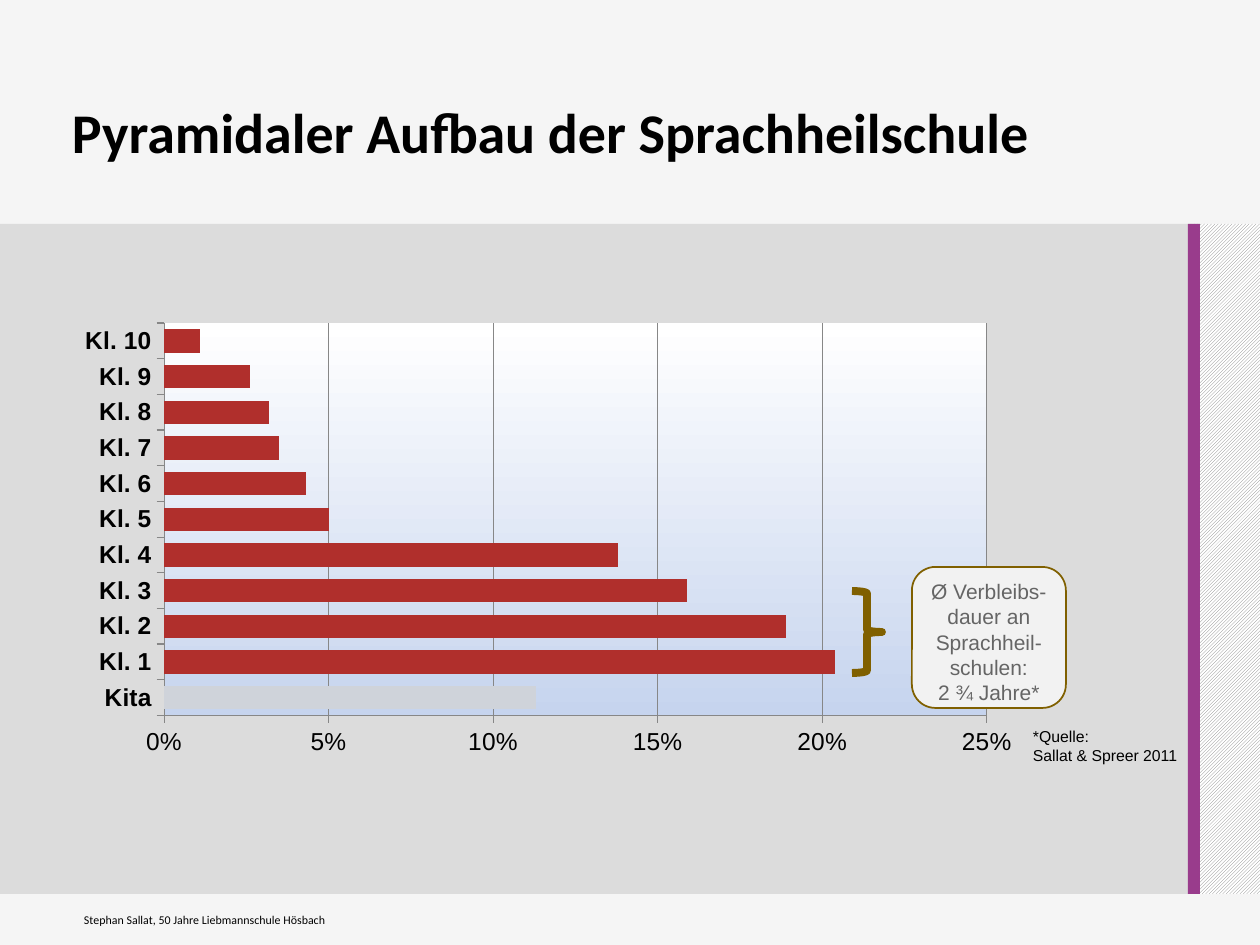
import pptx
import pptx.chart.data
import pptx.dml.color
import pptx.enum.chart
import pptx.enum.dml
import pptx.enum.shapes
import pptx.enum.text
import pptx.oxml
import pptx.oxml.ns
import pptx.util

PX = 914400 // 126
SHAPE = pptx.enum.shapes.MSO_SHAPE
ANCHOR = pptx.enum.text.MSO_ANCHOR
ALIGN = pptx.enum.text.PP_ALIGN

COLORS = {
    "page": "F5F5F5", "panel": "DCDCDC", "stripe": "993C8C",
    "hatch": "808080", "white": "FFFFFF", "black": "000000",
    "bar": "B02F2C", "kita": "CFD3DA", "axis": "878787",
    "plot_bottom": "C6D4EE", "brown": "806000",
    "note": "F2F2F2", "note_text": "656565",
}

TITLE = "Pyramidaler Aufbau der Sprachheilschule"
FOOTER = "Stephan Sallat, 50 Jahre Liebmannschule Hösbach"
NOTE = "Ø Verbleibs-dauer an Sprachheil-schulen:\n2 ¾ Jahre*"
SOURCE = "*Quelle:\nSallat & Spreer 2011"
SHARES = [
    ("Kita", 0.113), ("Kl. 1", 0.204), ("Kl. 2", 0.189), ("Kl. 3", 0.159),
    ("Kl. 4", 0.138), ("Kl. 5", 0.05), ("Kl. 6", 0.043), ("Kl. 7", 0.035),
    ("Kl. 8", 0.032), ("Kl. 9", 0.026), ("Kl. 10", 0.011),
]
PLOT_LAYOUT = {"x": 0.096, "y": 0.071, "w": 0.857, "h": 0.749}

PANEL_TOP, PANEL_HEIGHT = 224, 670
LEFT = 72


def rgb(name):
    return pptx.dml.color.RGBColor.from_string(COLORS[name])


def box(*px):
    return [v * PX for v in px]


def set_font(font, size, color="black", name="Arial", bold=False):
    font.size = pptx.util.Pt(size)
    font.name = name
    font.bold = bold
    font.color.rgb = rgb(color)


def write(sp, text, *, align=ALIGN.LEFT, anchor=ANCHOR.TOP, inset=(9, 5),
          spacing=None, **font):
    tf = sp.text_frame
    tf.word_wrap = True
    tf.auto_size = pptx.enum.text.MSO_AUTO_SIZE.NONE
    tf.vertical_anchor = anchor
    tf.margin_left = tf.margin_right = inset[0] * PX
    tf.margin_top = tf.margin_bottom = inset[1] * PX
    p = tf.paragraphs[0]
    p.text = text
    p.alignment = align
    p.line_spacing = spacing
    for r in p.runs:
        set_font(r.font, **font)


def add_shape(s, kind, at, fill=None, line=None, width=1):
    sp = s.shapes.add_shape(kind, *box(*at))
    sp.shadow.inherit = False
    if fill:
        sp.fill.solid()
        sp.fill.fore_color.rgb = rgb(fill)
    else:
        sp.fill.background()
    if line:
        sp.line.color.rgb = rgb(line)
        sp.line.width = pptx.util.Pt(width)
    else:
        sp.line.fill.background()
    return sp


def add_background(s):
    s.background.fill.solid()
    s.background.fill.fore_color.rgb = rgb("page")
    hatch = add_shape(s, SHAPE.RECTANGLE, (1188, PANEL_TOP, 72, PANEL_HEIGHT))
    hatch.fill.patterned()
    hatch.fill.pattern = pptx.enum.dml.MSO_PATTERN.LIGHT_UPWARD_DIAGONAL
    hatch.fill.fore_color.rgb = rgb("hatch")
    hatch.fill.back_color.rgb = rgb("white")
    for left, width, color in [(0, 1200, "panel"), (1188, 12, "stripe")]:
        add_shape(s, SHAPE.RECTANGLE, (left, PANEL_TOP, width, PANEL_HEIGHT), color)


def format_plot_area(chart):
    """Fix the inner plot position and give it a vertical gradient."""
    ns = pptx.oxml.ns.nsdecls("c", "a")
    area = chart.plots[0]._element.getparent()
    for old in area.findall(pptx.oxml.ns.qn("c:layout")):
        area.remove(old)
    modes = '<c:xMode val="edge"/><c:yMode val="edge"/>'
    sizes = "".join(f'<c:{k} val="{v}"/>' for k, v in PLOT_LAYOUT.items())
    area.insert(0, pptx.oxml.parse_xml(
        f'<c:layout {ns}><c:manualLayout><c:layoutTarget val="inner"/>'
        f'{modes}{sizes}</c:manualLayout></c:layout>'))
    stops = "".join(
        f'<a:gs pos="{pos}"><a:srgbClr val="{COLORS[name]}"/></a:gs>'
        for pos, name in [(0, "plot_bottom"), (100000, "white")])
    area.append(pptx.oxml.parse_xml(
        f'<c:spPr {ns}><a:gradFill><a:gsLst>{stops}</a:gsLst>'
        f'<a:lin ang="16200000" scaled="0"/></a:gradFill>'
        f'<a:ln><a:noFill/></a:ln></c:spPr>'))


def add_share_chart(s):
    data = pptx.chart.data.CategoryChartData(number_format="0%")
    data.categories = [name for name, _ in SHARES]
    data.add_series("Series 1", [value for _, value in SHARES])
    chart = s.shapes.add_chart(
        pptx.enum.chart.XL_CHART_TYPE.BAR_CLUSTERED,
        *box(LEFT, 286, 960, 524), data).chart
    chart.has_legend = False
    chart.has_title = False
    set_font(chart.font, 10, name="Calibri")

    values, categories = chart.value_axis, chart.category_axis
    values.minimum_scale, values.maximum_scale, values.major_unit = 0, 0.25, 0.05
    values.tick_labels.number_format = "0%"
    values.tick_labels.number_format_is_linked = False
    values.has_major_gridlines = True
    lines = [values.major_gridlines.format.line]
    for axis in (values, categories):
        axis.major_tick_mark = pptx.enum.chart.XL_TICK_MARK.OUTSIDE
        set_font(axis.tick_labels.font, 14, bold=axis is categories)
        lines.append(axis.format.line)
    for line in lines:
        line.color.rgb = rgb("axis")
        line.width = pptx.util.Pt(0.75)

    plot = chart.plots[0]
    plot.gap_width, plot.overlap = 54, 13
    plot.vary_by_categories = False
    series = plot.series[0]
    series.invert_if_negative = False
    for part, color in [(series, "bar"), (series.points[0], "kita")]:
        part.format.fill.solid()
        part.format.fill.fore_color.rgb = rgb(color)
    format_plot_area(chart)


def main():
    prs = pptx.Presentation()
    prs.slide_width, prs.slide_height = box(1260, 945)
    s = prs.slides.add_slide(prs.slide_layouts[5])
    add_background(s)

    title = s.shapes.title
    title.left, title.top, title.width, title.height = box(LEFT, 60, 1160, 112)
    write(title, TITLE, anchor=ANCHOR.BOTTOM, inset=(0, 6), spacing=0.9,
          size=32, name="Calibri", bold=True)

    footer = s.shapes.add_textbox(*box(LEFT, 894, 558, 51))
    write(footer, FOOTER, anchor=ANCHOR.MIDDLE, inset=(12, 6),
          size=6.8, name="Calibri")

    add_share_chart(s)

    brace = add_shape(s, SHAPE.RIGHT_BRACE, (852, 591, 30, 82),
                      line="brown", width=4.5)
    brace.adjustments[0] = 0.083
    note = add_shape(s, SHAPE.ROUNDED_RECTANGLE, (912, 567, 154, 141),
                     "note", "brown")
    write(note, NOTE, align=ALIGN.CENTER, size=12, color="note_text")

    source = s.shapes.add_textbox(*box(1024, 722, 228, 48))
    write(source, SOURCE, size=9)

    prs.save("out.pptx")


if __name__ == "__main__":
    main()
